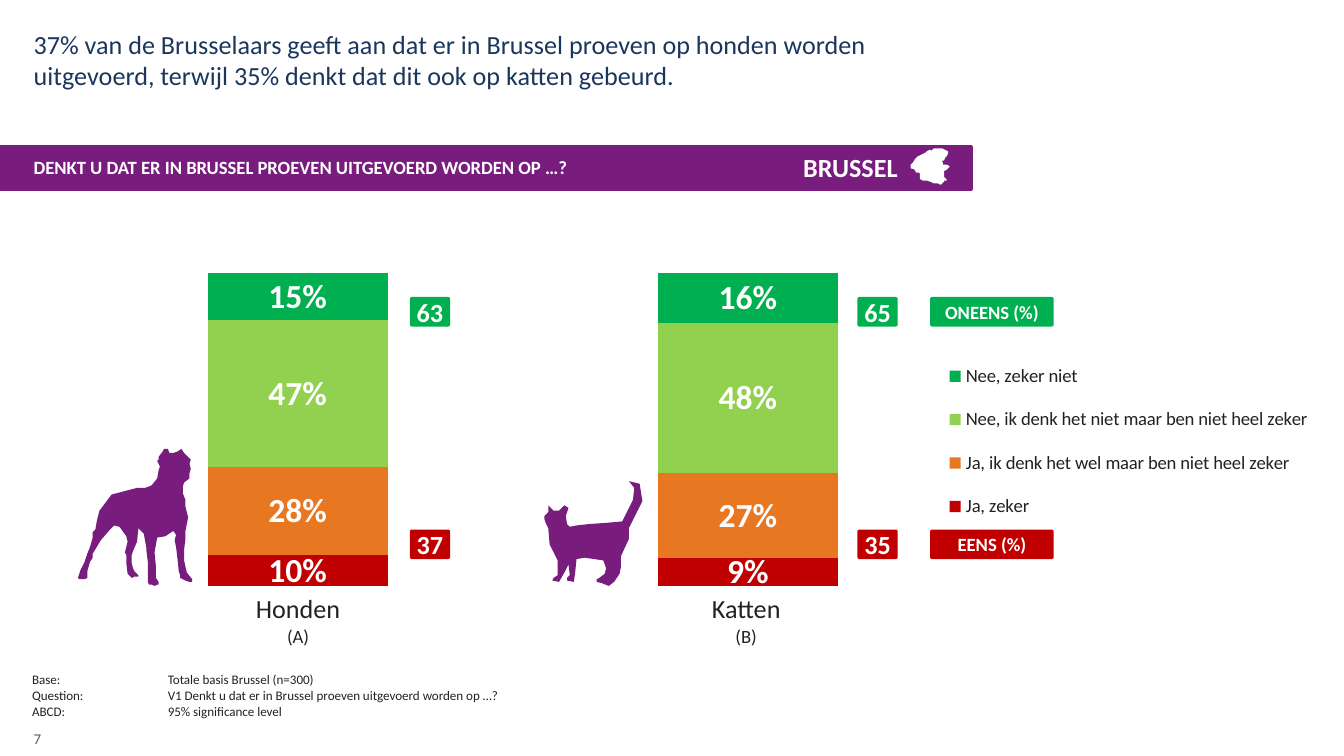
from pptx import Presentation, util as u
from pptx.chart.data import CategoryChartData
from pptx.dml.color import RGBColor
from pptx.enum import chart as ch, shapes, text
from lxml import etree

WIDE = 10
HIGH = WIDE * 9 / 16
FONT = "Calibri"
PURPLE = RGBColor(0x78, 0x1D, 0x7E)
NAVY = RGBColor(0x1B, 0x36, 0x5D)
INK = RGBColor(0x22, 0x22, 0x23)
GRAY = RGBColor(0x58, 0x58, 0x5B)
WHITE = RGBColor(0xFF, 0xFF, 0xFF)
RED = RGBColor(0xC0, 0x00, 0x00)
ORANGE = RGBColor(0xE8, 0x77, 0x22)
LIME = RGBColor(0x92, 0xD0, 0x50)
GREEN = RGBColor(0x00, 0xB0, 0x50)
LEFT, CENTER, RIGHT = text.PP_ALIGN.LEFT, text.PP_ALIGN.CENTER, text.PP_ALIGN.RIGHT
TOP, MIDDLE, BOTTOM = text.MSO_ANCHOR.TOP, text.MSO_ANCHOR.MIDDLE, text.MSO_ANCHOR.BOTTOM

TITLE = ("37% van de Brusselaars geeft aan dat er in Brussel proeven op honden worden "
         "uitgevoerd, terwijl 35% denkt dat dit ook op katten gebeurd.")
ASK = "DENKT U DAT ER IN BRUSSEL PROEVEN UITGEVOERD WORDEN OP …?"
PETS = [("Honden", "(A)"), ("Katten", "(B)")]
SERIES = [
    ("Ja, zeker", (10, 9), RED),
    ("Ja, ik denk het wel maar ben niet heel zeker", (28, 27), ORANGE),
    ("Nee, ik denk het niet maar ben niet heel zeker", (47, 48), LIME),
    ("Nee, zeker niet", (15, 16), GREEN),
]
# left, width, size, then the text of the green row and the red row
BADGES = [
    (3.05, 0.3, 14, ("63", "37")),
    (6.38, 0.3, 14, ("65", "35")),
    (6.92, 0.92, 10, ("ONEENS (%)", "EENS (%)")),
]
ROWS = [(2.21, GREEN), (3.94, RED)]
NOTES = [
    "Base:\tTotale basis Brussel (n=300)",
    "Question:\tV1 Denkt u dat er in Brussel proeven uitgevoerd worden op …?"
    "\vABCD:\t95% significance level",
]

# Outlines: x and y in hundredths of an inch on the slide
DOG = [
    (141, 433), (143, 433), (143, 431), (139, 426), (137, 417), (137, 409), (138, 401),
    (138, 395), (140, 385), (138, 377), (138, 372), (136, 367), (136, 362), (137, 359),
    (141, 356), (141, 352), (142, 349), (141, 345), (142, 342), (139, 339), (137, 337),
    (135, 334), (132, 336), (129, 337), (126, 337), (125, 334), (122, 334), (121, 336),
    (118, 340), (118, 342), (117, 343), (119, 347), (118, 350), (117, 356), (113, 361),
    (111, 362), (108, 363), (102, 363), (83, 368), (74, 380), (72, 388), (71, 394),
    (69, 396), (69, 400), (67, 407), (65, 412), (63, 418), (60, 424), (59, 427),
    (58, 430), (59, 431), (61, 431), (63, 431), (65, 430), (65, 428), (65, 425),
    (67, 418), (69, 415), (69, 412), (75, 402), (81, 395), (85, 391), (89, 392),
    (94, 399), (95, 403), (93, 411), (94, 413), (94, 419), (95, 427), (98, 430),
    (100, 429), (103, 429), (103, 428), (100, 425), (99, 423), (98, 419), (98, 413),
    (99, 410), (102, 403), (103, 393), (107, 397), (109, 408), (109, 410), (110, 418),
    (110, 433), (111, 435), (113, 435), (115, 436), (117, 435), (118, 435), (118, 433),
    (116, 430), (116, 421), (115, 411), (117, 400), (123, 399), (129, 395), (131, 398),
    (130, 402), (131, 407), (132, 415), (133, 425), (134, 428), (134, 430), (136, 431),
    (138, 432),
]
CAT = [
    (450, 427), (451, 423), (449, 417), (442, 416), (435, 415), (429, 416), (428, 426),
    (427, 433), (422, 432), (422, 430), (424, 428), (423, 420), (420, 426), (416, 433),
    (411, 432), (412, 430), (415, 428), (415, 417), (409, 405), (408, 393), (406, 389),
    (405, 386), (405, 384), (408, 381), (408, 376), (412, 380), (416, 380), (420, 376),
    (423, 378), (421, 384), (422, 390), (424, 392), (429, 391), (438, 390), (452, 389),
    (463, 388), (471, 372), (472, 363), (468, 358), (476, 360), (478, 373), (468, 393),
    (468, 401), (462, 414), (462, 422), (461, 427), (457, 433), (453, 436), (448, 434),
    (444, 433), (444, 431), (446, 430),
]
REGION = [
    (681, 119), (680, 121), (679, 122), (678, 123), (678, 125), (679, 125), (681, 126),
    (682, 128), (684, 128), (685, 129), (685, 133), (687, 134), (690, 134), (693, 135),
    (695, 136), (698, 136), (700, 137), (701, 136), (702, 135), (702, 134), (704, 134),
    (702, 132), (702, 127), (704, 126), (705, 125), (706, 124), (704, 123), (701, 123),
    (701, 121), (700, 121), (701, 119), (702, 119), (703, 117), (704, 116), (705, 114),
    (705, 113), (703, 112), (701, 111), (695, 111), (693, 113), (692, 112), (690, 113),
    (689, 114), (687, 115), (685, 116), (683, 117),
]


def style(font, size, color, bold=False):
    font.name, font.size, font.bold = FONT, u.Pt(size), bold
    font.color.rgb = color


def place(shape, *box):
    shape.left, shape.top, shape.width, shape.height = map(u.Inches, box)


def write(shape, lines, size, color, bold=False, align=LEFT, anchor=TOP, inset=0, tab=0):
    frame = shape.text_frame
    frame.word_wrap, frame.vertical_anchor = True, anchor
    frame.auto_size = text.MSO_AUTO_SIZE.NONE
    for side in ("left", "top", "right", "bottom"):
        setattr(frame, "margin_" + side, u.Inches(inset))
    for i, line in enumerate(lines):
        para = frame.add_paragraph() if i else frame.paragraphs[0]
        para.text, para.alignment = line, align
        if tab:
            add_tab(para, tab)
        for run in para.runs:
            style(run.font, size, color, bold)
    return frame


def add_tab(para, pos):
    ns = "{http://schemas.openxmlformats.org/drawingml/2006/main}"
    stops = etree.SubElement(para._p.get_or_add_pPr(), ns + "tabLst")
    etree.SubElement(stops, ns + "tab", pos=str(u.Inches(pos)), algn="l")


def label(box, lines, *args, **opts):
    return write(slide.shapes.add_textbox(*map(u.Inches, box)), lines, *args, **opts)


def paint(shape, color, line=None):
    shape.shadow.inherit = False
    shape.fill.solid()
    shape.fill.fore_color.rgb = color
    if line:
        shape.line.color.rgb, shape.line.width = color, u.Pt(line)
    else:
        shape.line.fill.background()


def outline(dots, color, line=None):
    dots = [(u.Inches(x / 100), u.Inches(y / 100)) for x, y in dots]
    pen = slide.shapes.build_freeform(*dots[0])
    pen.add_line_segments(dots[1:], close=True)
    paint(pen.convert_to_shape(), color, line)


def add_bars(left, top, width, height):
    data = CategoryChartData(number_format="0")
    data.categories = ["1", "2"]
    for name, vals, _ in SERIES:
        data.add_series(name, vals)
    chart = slide.shapes.add_chart(ch.XL_CHART_TYPE.COLUMN_STACKED_100,
                                   *map(u.Inches, (left, top, width, height)), data).chart
    style(chart.font, 18, INK)
    chart.has_title = False
    chart.category_axis.visible = chart.value_axis.visible = False
    axis = chart.value_axis
    axis.minimum_scale, axis.maximum_scale = 0, 1
    axis.has_major_gridlines = False
    plot = chart.plots[0]
    plot.gap_width, plot.overlap, plot.vary_by_categories = 150, 100, False
    for bar, (_, _, color) in zip(plot.series, SERIES):
        bar.format.fill.solid()
        bar.format.fill.fore_color.rgb = color
        tags = bar.data_labels
        tags.show_value = True
        tags.number_format, tags.number_format_is_linked = "0\\%", False
        style(tags.font, 18, WHITE, True)
    chart.has_legend = True
    key = chart.legend
    key.position, key.include_in_layout = ch.XL_LEGEND_POSITION.RIGHT, False
    style(key.font, 10, INK)
    area = chart._chartSpace.chart.plotArea
    set_layout(area, 0, (0.26 / width, 0, 6.7 / width, 2.33 / height), inner=True)
    set_layout(key._element, 1, (0.69, 0.22, 0.29, 0.61))


def set_layout(node, index, box, inner=False):
    """Fix a chart part to shares (x, y, w, h) of the chart's frame."""
    ns = "{http://schemas.openxmlformats.org/drawingml/2006/chart}"
    for old in node.findall(ns + "layout"):
        node.remove(old)
    layout = etree.Element(ns + "layout")
    manual = etree.SubElement(layout, ns + "manualLayout")
    pairs = [("layoutTarget", "inner")] if inner else []
    pairs += [("xMode", "edge"), ("yMode", "edge"), *zip("xywh", box)]
    for tag, val in pairs:
        etree.SubElement(manual, ns + tag).set("val", str(val))
    node.insert(index, layout)


def add_names():
    table = slide.shapes.add_table(1, 2, *map(u.Inches, (0.55, 4.37, 6.67, 0.5))).table
    table.first_row = table.horz_banding = False
    for cell, words in zip(table.rows[0].cells, PETS):
        cell.fill.background()
        para = cell.text_frame.paragraphs[0]
        para.text, para.alignment = "\v".join(words), CENTER
        for run, size in zip(para.runs, (14, 10)):
            style(run.font, size, INK)


prs = Presentation()
prs.slide_width, prs.slide_height = u.Inches(WIDE), u.Inches(HIGH)
slide = prs.slides.add_slide(prs.slide_layouts[5])

label((0.25, 5.3, 0.34, 0.26), ["7"], 8, GRAY, anchor=BOTTOM)
band = slide.shapes.add_shape(shapes.MSO_SHAPE.RECTANGLE, *map(u.Inches, (0, 1.09, 7.23, 0.32)))
paint(band, PURPLE, 2)
head = slide.shapes.title
place(head, 0.25, 0.21, 6.98, 0.59)
write(head, [TITLE], 14, NAVY)

add_bars(0.28, 2.03, 9.72, 2.39)
for left, width, size, words in BADGES:
    for (top, color), word in zip(ROWS, words):
        badge = slide.shapes.add_shape(shapes.MSO_SHAPE.ROUNDED_RECTANGLE,
                                       *map(u.Inches, (left, top, width, 0.22)))
        badge.adjustments[0] = 0.07
        paint(badge, color)
        write(badge, [word], size, WHITE, True, CENTER, MIDDLE)

label((4.96, 1.13, 1.72, 0.24), ["BRUSSEL"], 14, WHITE, True, RIGHT)
outline(DOG, PURPLE)
outline(CAT, PURPLE)
outline(REGION, WHITE, 0.75)
label((0.14, 4.95, 7.45, 0.35), NOTES, 7, INK, inset=0.1, tab=1.01).margin_top = u.Inches(0.05)
label((0.25, 1.18, 9.45, 0.2), [ASK], 10, WHITE, True).paragraphs[0].line_spacing = 0.9
add_names()
prs.save("out.pptx")
